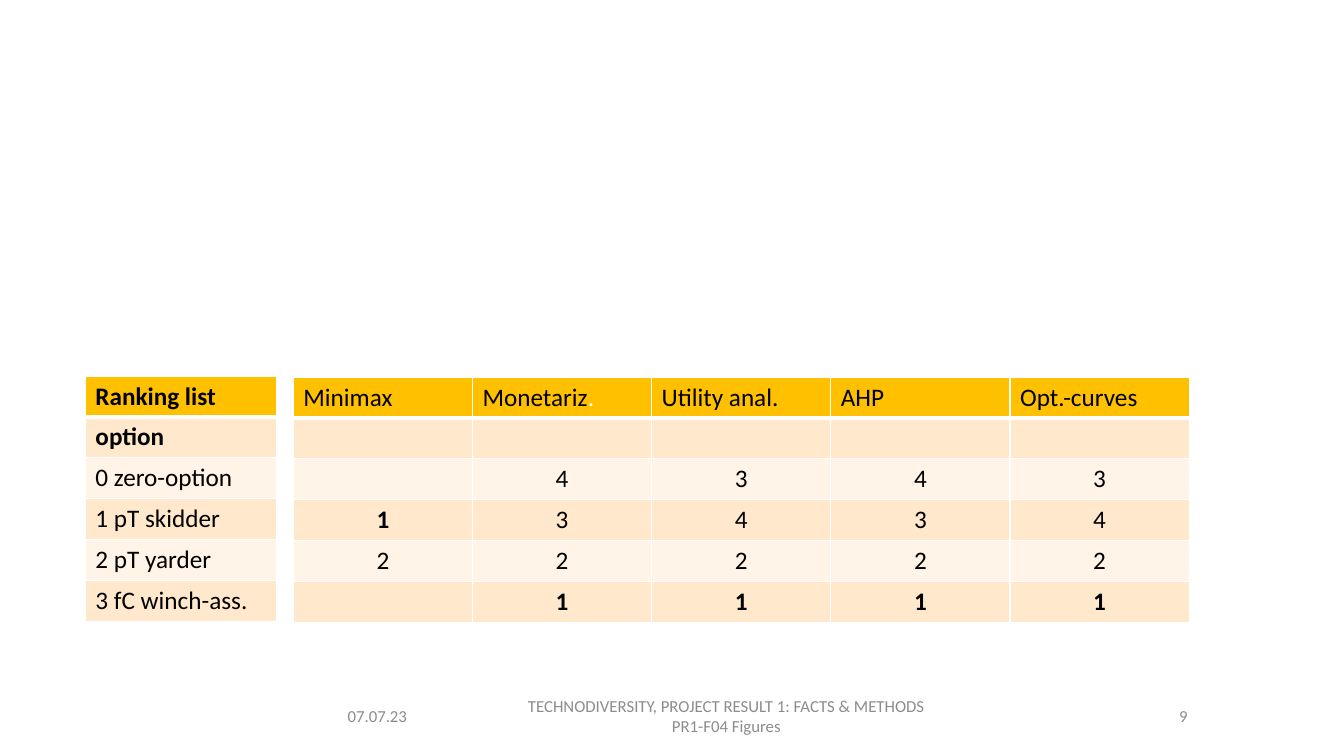
import pptx
import pptx.dml.color
import pptx.enum.text
import pptx.oxml
import pptx.oxml.ns
import pptx.util

Pt = pptx.util.Pt
ALIGN = pptx.enum.text.PP_ALIGN
COLORS = {
    "header": "FFC000",
    "band_dark": "FFE8CC",
    "band_light": "FFF4E7",
    "border": "FFFFFF",
    "text": "000000",
    "footer": "8C8C8C",
}
ROW_HEIGHT = 29.2
METHODS = [
    ["Minimax", "Monetariz.", "Utility anal.", "AHP", "Opt.-curves"],
    ["", "", "", "", ""],
    ["", "4", "3", "4", "3"],
    ["1", "3", "4", "3", "4"],
    ["2", "2", "2", "2", "2"],
    ["", "1", "1", "1", "1"],
]
OPTIONS = ["Ranking list", "option", "0 zero-option", "1 pT skidder",
           "2 pT yarder", "3 fC winch-ass."]


class SlideBuilder:
    """Hold the style and the current slide and add its elements."""

    def __init__(self, slide, font_name):
        self.slide = slide
        self.font_name = font_name

    def add_run(self, paragraph, text, size, color, bold=False):
        run = paragraph.add_run()
        run.text = text
        run.font.name = self.font_name
        run.font.size = Pt(size)
        run.font.bold = bold
        run.font.color.rgb = pptx.dml.color.RGBColor.from_string(COLORS[color])

    def add_footer(self, left, width, lines, alignment):
        shape = self.slide.shapes.add_textbox(Pt(left), Pt(497), Pt(width), Pt(28.8))
        frame = shape.text_frame
        frame.word_wrap = True
        frame.vertical_anchor = pptx.enum.text.MSO_ANCHOR.MIDDLE
        for index, line in enumerate(lines):
            paragraph = frame.add_paragraph() if index else frame.paragraphs[0]
            paragraph.alignment = alignment
            self.add_run(paragraph, line, 12, "footer")

    def add_borders(self, cell, bottom_width):
        properties = cell._tc.get_or_add_tcPr()
        widths = {"lnL": 1, "lnR": 1, "lnT": 1, "lnB": bottom_width}
        for position, (side, width) in enumerate(widths.items()):
            line = pptx.oxml.parse_xml(
                f'<a:{side} {pptx.oxml.ns.nsdecls("a")} w="{Pt(width)}"><a:solidFill>'
                f'<a:srgbClr val="{COLORS["border"]}"/></a:solidFill></a:{side}>')
            properties.insert(position, line)

    def add_table(self, left, top, column_width, rows, is_bold):
        row_count, column_count = len(rows), len(rows[0])
        table = self.slide.shapes.add_table(
            row_count, column_count, Pt(left), Pt(top),
            Pt(column_width * column_count), Pt(ROW_HEIGHT * row_count)).table
        table.first_row = table.horz_banding = False
        for row_index, row in enumerate(rows):
            table.rows[row_index].height = Pt(ROW_HEIGHT)
            band = "band_dark" if row_index % 2 else "band_light"
            fill = band if row_index else "header"
            for column_index, text in enumerate(row):
                cell = table.cell(row_index, column_index)
                cell.fill.solid()
                cell.fill.fore_color.rgb = pptx.dml.color.RGBColor.from_string(COLORS[fill])
                self.add_borders(cell, 1 if row_index else 3)
                paragraph = cell.text_frame.paragraphs[0]
                paragraph.font.size = Pt(18)
                if text.isdigit():
                    paragraph.alignment = ALIGN.CENTER
                label = text.removesuffix(".") if text == "Monetariz." else text
                if label:
                    self.add_run(paragraph, label, 18, "text", is_bold(row_index, text))
                if label != text:
                    self.add_run(paragraph, ".", 18, "border")


def main():
    presentation = pptx.Presentation()
    presentation.slide_width = Pt(960)
    presentation.slide_height = Pt(540)
    slide = presentation.slides.add_slide(presentation.slide_layouts[6])
    builder = SlideBuilder(slide, "Calibri")
    builder.add_footer(241.2, 96.5, ["07.07.23"], ALIGN.LEFT)
    builder.add_footer(
        350, 337.7,
        ["TECHNODIVERSITY, PROJECT RESULT 1: FACTS & METHODS", "PR1-F04 Figures"],
        ALIGN.CENTER)
    builder.add_footer(703.4, 152, ["9"], ALIGN.RIGHT)
    builder.add_table(209.5, 269.3, 128, METHODS, lambda row, text: text == "1")
    builder.add_table(61, 268.6, 136.8, [[option] for option in OPTIONS],
                      lambda row, text: row < 2)
    presentation.save("out.pptx")


if __name__ == "__main__":
    main()
